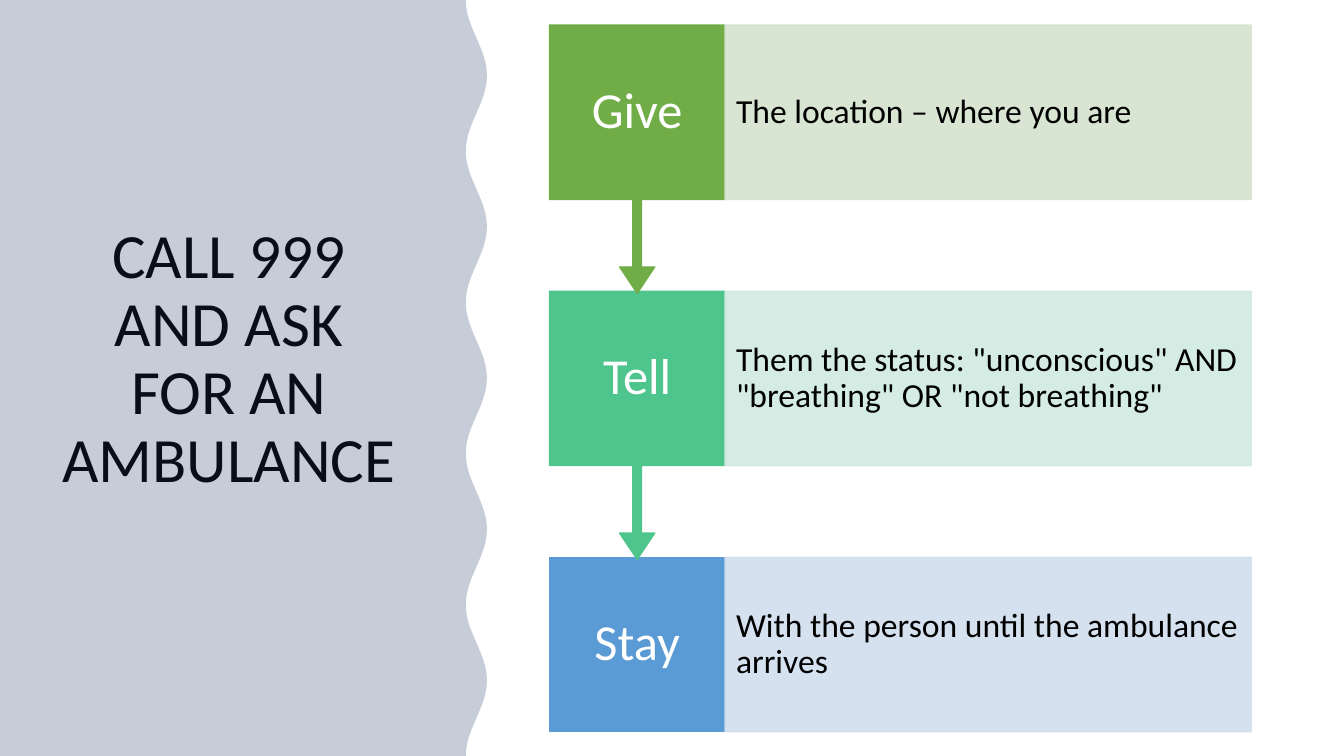
from math import cos, pi

from lxml.etree import SubElement
from pptx import Presentation
from pptx.dml.color import RGBColor
from pptx.enum.shapes import MSO_SHAPE as Preset
from pptx.enum.text import MSO_ANCHOR as Anchor, PP_ALIGN as Align
from pptx.oxml.ns import qn
from pptx.util import Inches, Pt

TITLE = "CALL 999 AND ASK FOR AN AMBULANCE"
STEPS = [
    ("Give", "The location – where you are", "70AD47", "D5E3CF"),
    ("Tell", 'Them the status: "unconscious" AND "breathing" OR "not breathing"', "4DC58D", "D0EAE1"),
    ("Stay", "With the person until the ambulance arrives", "5B9BD5", "D2DEEF"),
]
FONT, BLACK, WHITE, PANEL = "Calibri", "000000", "FFFFFF", "203864"
WIDTH, HEIGHT = 13.33, 7.5
WAVES, POINTS_PER_WAVE, WAVE_TROUGH, WAVE_PEAK = 5, 24, 4.62, 4.83
LEFT, TOP, PITCH = 5.45, 0.25, 2.64
VERB_WIDTH, DETAIL_WIDTH, ROW_HEIGHT, CALLOUT_HEIGHT = 1.74, 5.22, 1.73, 2.66
CALLOUT_SHARES = (0.05, 0.1, 0.15, 0.65)


def paint(color_format, color, opacity=100):
    """Fill a solid fill with a hex colour at a percentage of opacity."""
    color_format.solid()
    color_format.fore_color.rgb = RGBColor.from_string(color)
    if opacity < 100:
        for element in color_format._xPr.iterfind(qn("a:solidFill") + "/" + qn("a:srgbClr")):
            SubElement(element, qn("a:alpha")).set("val", str(opacity * 1000))


def write(shape, text, size, color, align, anchor):
    """Put one formatted paragraph into a shape."""
    frame = shape.text_frame
    frame.word_wrap = True
    frame.vertical_anchor = anchor
    frame.text = text
    paragraph = frame.paragraphs[0]
    paragraph.alignment = align
    paragraph.line_spacing = 0.9
    paragraph.font.name = FONT
    paragraph.font.size = Pt(size)
    paragraph.font.color.rgb = RGBColor.from_string(color)


def add_box(slide, preset, box, color, opacity, text, size, text_color, align, insets):
    """Add a coloured preset shape with its text."""
    shape = slide.shapes.add_shape(preset, *map(Inches, box))
    shape.shadow.inherit = False
    paint(shape.fill, color, opacity)
    paint(shape.line.fill, color, opacity)
    shape.line.width = Pt(1)
    write(shape, text, size, text_color, align, Anchor.MIDDLE)
    frame = shape.text_frame
    frame.margin_left = frame.margin_right = Inches(insets[0])
    frame.margin_top = frame.margin_bottom = Inches(insets[1])
    return shape


def add_wavy_panel(slide):
    """Draw the tinted left panel with its wavy right edge."""
    middle, swing = (WAVE_TROUGH + WAVE_PEAK) / 2, (WAVE_PEAK - WAVE_TROUGH) / 2
    count = WAVES * POINTS_PER_WAVE
    edge = [
        (Inches(middle - swing * cos(2 * pi * index / POINTS_PER_WAVE)), Inches(HEIGHT * index / count))
        for index in range(count + 1)
    ]
    builder = slide.shapes.build_freeform(0, 0)
    builder.add_line_segments(edge + [(0, Inches(HEIGHT))], close=True)
    panel = builder.convert_to_shape()
    panel.shadow.inherit = False
    paint(panel.fill, PANEL, 25)
    panel.line.fill.background()


def add_step(slide, row):
    """Add one verb box, with an arrow unless it is last, and its detail."""
    verb, detail, strong, pale = STEPS[row]
    top = TOP + row * PITCH
    last = row == len(STEPS) - 1
    preset = Preset.RECTANGLE if last else Preset.DOWN_ARROW_CALLOUT
    height = ROW_HEIGHT if last else CALLOUT_HEIGHT
    verb_box = add_box(slide, preset, (LEFT, top, VERB_WIDTH, height), strong, 100,
                       verb, 36, WHITE, Align.CENTER, (0.12, 0.28))
    if not last:
        for index, share in enumerate(CALLOUT_SHARES):
            verb_box.adjustments[index] = share
    add_box(slide, Preset.RECTANGLE, (LEFT + VERB_WIDTH, top, DETAIL_WIDTH, ROW_HEIGHT), pale, 90,
            detail, 24, BLACK, Align.LEFT, (0.11, 0.33))


def main():
    """Build and save the slide."""
    presentation = Presentation()
    presentation.slide_width, presentation.slide_height = Inches(WIDTH), Inches(HEIGHT)
    slide = presentation.slides.add_slide(presentation.slide_layouts[5])
    add_wavy_panel(slide)
    title = slide.shapes.title
    title.left, title.top, title.width, title.height = map(Inches, (0.5, 0.79, 3.54, 4.18))
    write(title, TITLE, 45, BLACK, Align.CENTER, Anchor.BOTTOM)
    for row in reversed(range(len(STEPS))):
        add_step(slide, row)
    presentation.save("out.pptx")


if __name__ == "__main__":
    main()
